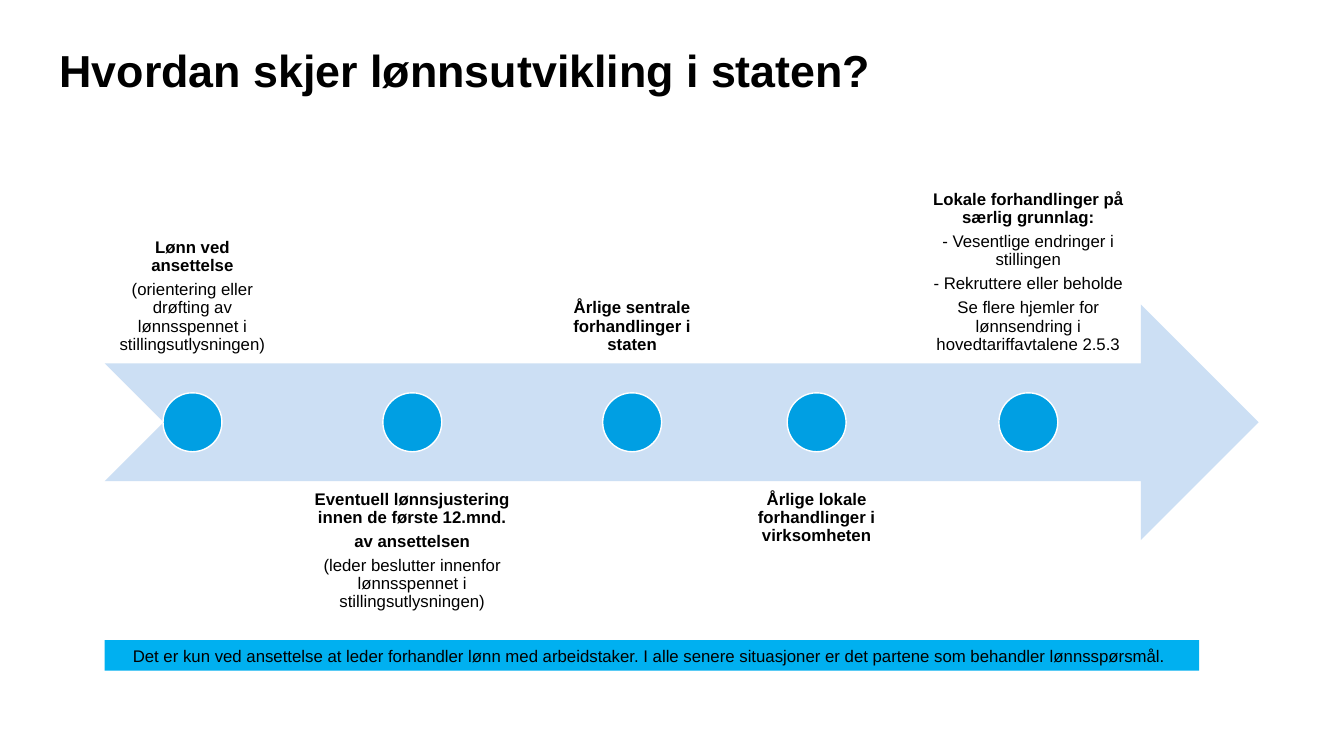
"""Builds a slide with a timeline arrow of how pay develops in the state sector."""
import pptx
import pptx.util
import pptx.dml.color
import pptx.enum.shapes
import pptx.enum.text

Cm, Pt = pptx.util.Cm, pptx.util.Pt
Kind = pptx.enum.shapes.MSO_SHAPE
Align = pptx.enum.text.PP_ALIGN
Anchor = pptx.enum.text.MSO_ANCHOR
Fit = pptx.enum.text.MSO_AUTO_SIZE

TITLE = "Hvordan skjer lønnsutvikling i staten?"
STEPS = [
    {"wide": 4.42, "bold": ["Lønn ved ansettelse"],
     "plain": ["(orientering eller drøfting av lønnsspennet i stillingsutlysningen)"]},
    {"wide": 6.2, "bold": ["Eventuell lønnsjustering innen de første 12.mnd.", "av ansettelsen"],
     "plain": ["(leder beslutter innenfor lønnsspennet i stillingsutlysningen)"]},
    {"wide": 4.42, "bold": ["Årlige sentrale forhandlinger i staten"], "plain": []},
    {"wide": 4.42, "bold": ["Årlige lokale forhandlinger i virksomheten"], "plain": []},
    {"wide": 5.79, "bold": ["Lokale forhandlinger på særlig grunnlag:"],
     "plain": ["- Vesentlige endringer i stillingen", "- Rekruttere eller beholde",
               "Se flere hjemler for lønnsendring i hovedtariffavtalene 2.5.3"]},
]
NOTE = ("Det er kun ved ansettelse at leder forhandler lønn med arbeidstaker. "
        "I alle senere situasjoner er det partene som behandler lønnsspørsmål. ")

THEME = {"font": "Arial", "head": 32, "body": 12, "ink": "000000", "arrow": "CCDFF4",
         "dot": "009FE3", "rim": "FFFFFF", "bar": "00B0F0"}
LEFT, TOP, LONG, TALL, GAP = 2.64, 7.67, 29.08, 5.94, 0.23
DOT = TALL / 4


def tint(name):
    return pptx.dml.color.RGBColor.from_string(THEME[name])


def write(shape, bold=(), plain=(), size="body", align=Align.CENTER, anchor=Anchor.TOP,
          inset=None, lead=0.9, after=0, fit=Fit.NONE):
    frame = shape.text_frame
    frame.word_wrap = True
    frame.auto_size = fit
    frame.vertical_anchor = anchor
    if inset is not None:
        frame.margin_left = frame.margin_right = Cm(inset)
        frame.margin_top = frame.margin_bottom = Cm(inset)
    lines = [(text, True) for text in bold] + [(text, False) for text in plain]
    for spot, (text, heavy) in enumerate(lines):
        para = frame.add_paragraph() if spot else frame.paragraphs[0]
        para.alignment = align
        para.line_spacing = lead
        para.space_before = Pt(0)
        para.space_after = Pt(after)
        run = para.add_run()
        run.text = text
        run.font.name = THEME["font"]
        run.font.size = Pt(THEME[size])
        run.font.bold = heavy
        run.font.color.rgb = tint("ink")


def draw(slide, kind, box, fill, rim=None):
    shape = slide.shapes.add_shape(kind, *map(Cm, box))
    shape.shadow.inherit = False
    shape.fill.solid()
    shape.fill.fore_color.rgb = tint(fill)
    if rim:
        shape.line.color.rgb = tint(rim)
        shape.line.width = Pt(1)
    else:
        shape.line.fill.background()
    return shape


def main():
    deck = pptx.Presentation()
    deck.slide_width, deck.slide_height = Cm(33.87), Cm(19.05)
    slide = deck.slides.add_slide(deck.slide_layouts[5])

    title = slide.shapes.title
    title.left, title.top, title.width, title.height = map(Cm, (1.5, 1.22, 30.84, 1.96))
    write(title, bold=[TITLE], size="head", align=Align.LEFT, inset=0)

    draw(slide, Kind.NOTCHED_RIGHT_ARROW, (LEFT, TOP, LONG, TALL), "arrow")
    mid = TOP + TALL / 2
    left = LEFT
    for spot, step in enumerate(STEPS):
        wide = step["wide"]
        above = spot % 2 == 0
        top = mid - TALL / 4 - TALL if above else mid + TALL / 4
        label = slide.shapes.add_textbox(*map(Cm, (left, top, wide, TALL)))
        write(label, step["bold"], step["plain"], inset=0.24, after=4.2,
              anchor=Anchor.BOTTOM if above else Anchor.TOP)
        dot = (left + (wide - DOT) / 2, mid - DOT / 2, DOT, DOT)
        draw(slide, Kind.OVAL, dot, "dot", rim="rim")
        left += wide + GAP

    bar = draw(slide, Kind.RECTANGLE, (LEFT, 16.13, 27.58, 0.77), "bar")
    write(bar, plain=[NOTE], anchor=Anchor.MIDDLE, lead=1.0, fit=Fit.SHAPE_TO_FIT_TEXT)
    deck.save("out.pptx")


if __name__ == "__main__":
    main()
